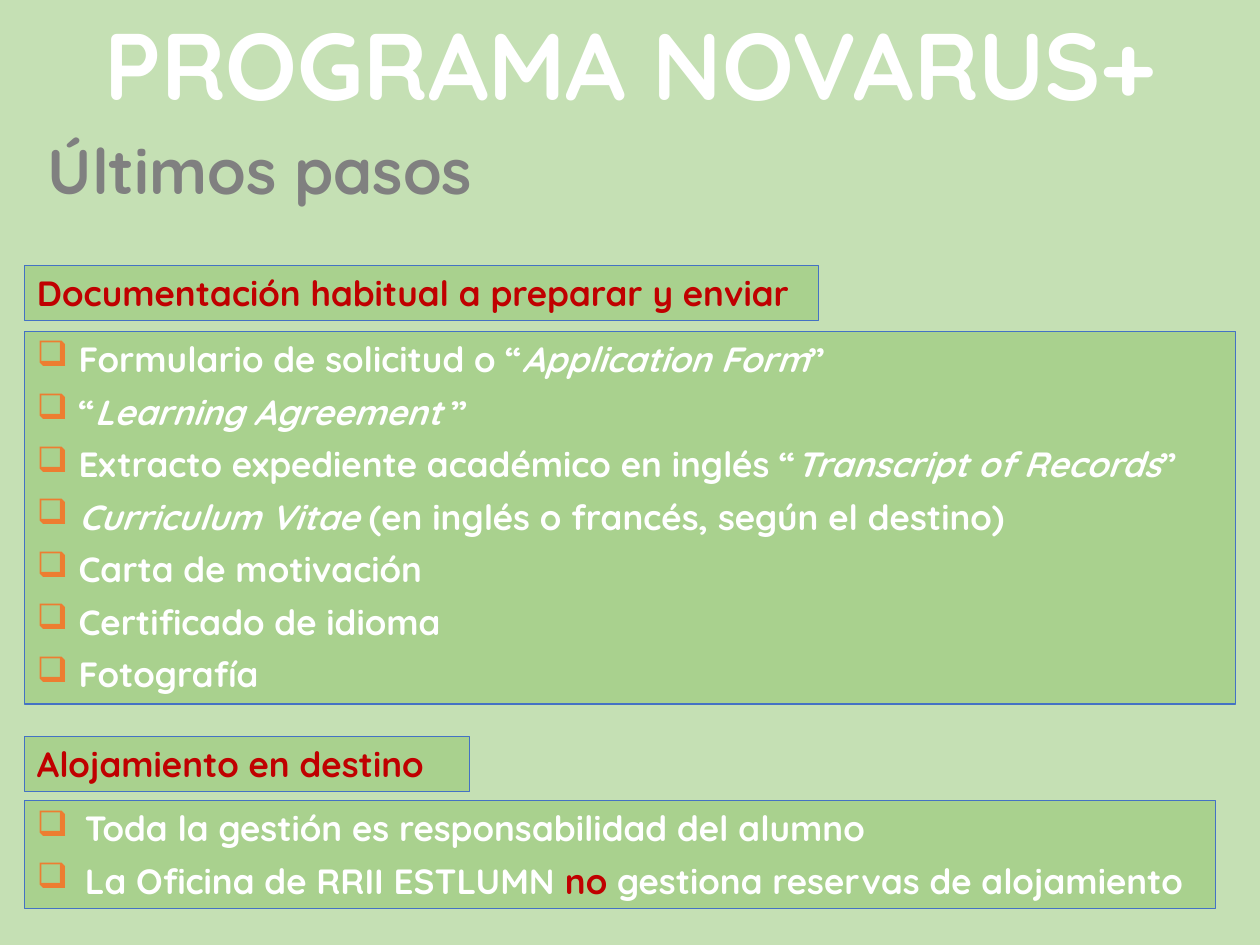
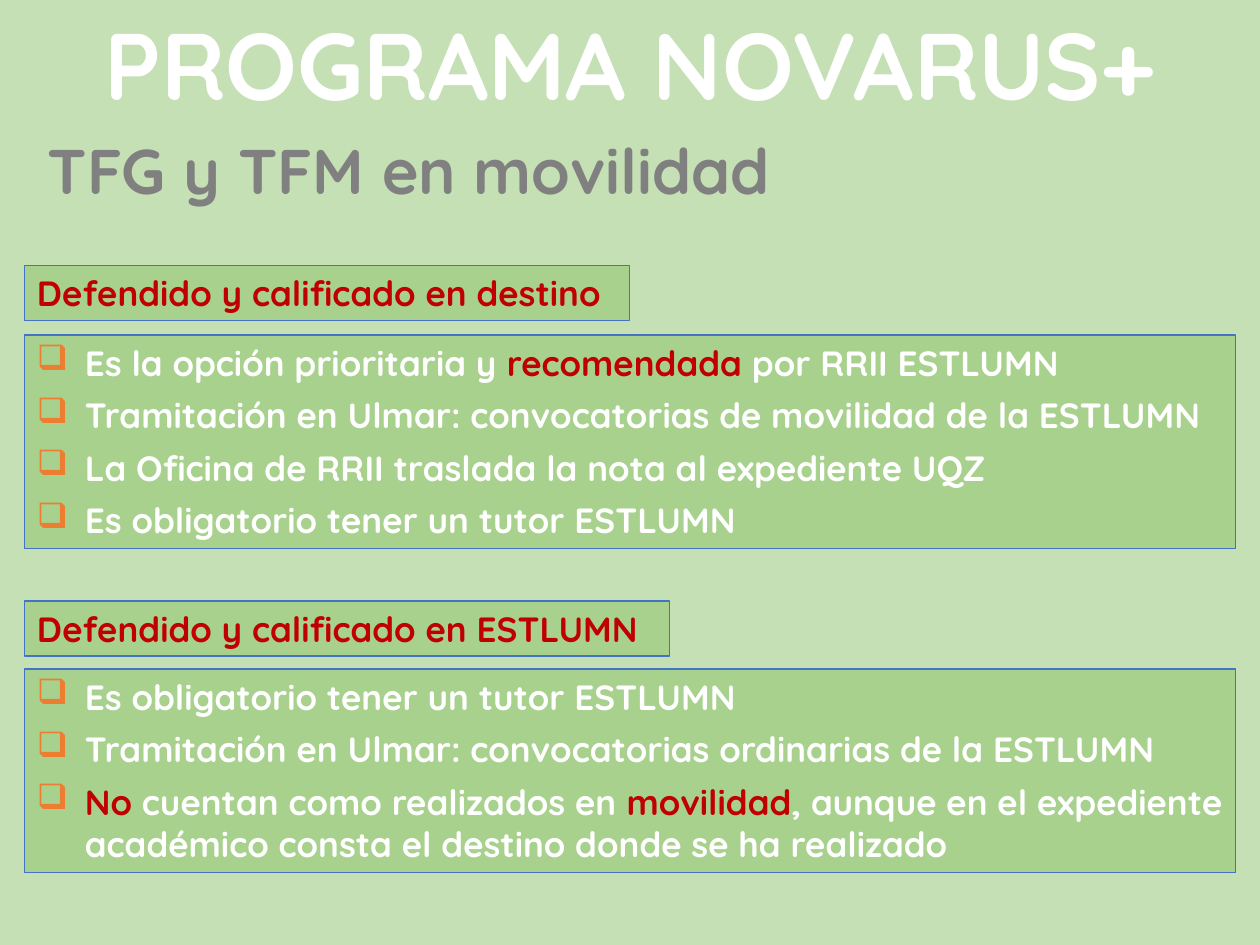
from dataclasses import dataclass
from typing import NamedTuple

from lxml import etree
from pptx import Presentation
from pptx.dml.color import RGBColor
from pptx.enum.shapes import MSO_SHAPE
from pptx.enum.text import MSO_ANCHOR, MSO_AUTO_SIZE, PP_ALIGN
from pptx.oxml.ns import qn
from pptx.util import Inches, Pt

RECTANGLE = MSO_SHAPE.RECTANGLE
TOP = MSO_ANCHOR.TOP
GROW = MSO_AUTO_SIZE.SHAPE_TO_FIT_TEXT
LEFT, CENTER = PP_ALIGN.LEFT, PP_ALIGN.CENTER

COLORS = {
    "background": "C5E0B4", "panel": "A9D18E", "border": "4472C4",
    "white": "FFFFFF", "red": "C00000", "gray": "808080", "bullet": "ED7D31",
}
FONT = "Quicksand"
BULLET = "❑"

# Grid: 100 columns by 75 rows on a 10 by 7.5 inch slide
SLIDE_WIDTH, SLIDE_HEIGHT = Inches(10), Inches(7.5)
COLUMN, ROW = SLIDE_WIDTH / 100, SLIDE_HEIGHT / 75
MARGIN = 1.95
FULL_WIDTH = 96.1
# Panel height in rows: padding, text lines and gaps between paragraphs
PADDING_ROWS, LINE_ROWS, GAP_ROWS = 1, 3.37, 0.83
PARAGRAPH_GAP = Pt(6)


class Run(NamedTuple):
    text: str
    color: str = "white"
    italic: bool = False


class Box(NamedTuple):
    left: float
    top: float
    width: float
    height: float


@dataclass
class Section:
    heading: str
    heading_top: float
    heading_width: float
    items: list[list[Run]]
    list_top: float
    list_width: float = FULL_WIDTH
    indent: float = 3.8
    wrapped_lines: int = 0


@dataclass
class Page:
    subtitle: str
    sections: list[Section]


TITLE = "PROGRAMA NOVARUS+"
TITLE_BOX = Box(0, 0, 100, 10.1)
SUBTITLE_BOX = Box(2.8, 9.95, 94.5, 7.1)

PAGES = [
    Page("Últimos pasos", [
        Section("Documentación habitual a preparar y enviar", 21.05, 63, [
            [Run("Formulario de solicitud o “"),
             Run("Application Form", italic=True), Run("”")],
            [Run("“"), Run("Learning Agreement ", italic=True), Run("”")],
            [Run("Extracto expediente académico en inglés “"),
             Run("Transcript of Records", italic=True), Run("”")],
            [Run("Curriculum Vitae ", italic=True),
             Run("(en inglés o francés, según el destino)")],
            [Run("Carta de motivación")],
            [Run("Certificado de idioma")],
            [Run("Fotografía")],
        ], list_top=26.3, indent=3.3),
        Section("Alojamiento en destino", 58.45, 35.3, [
            [Run("Toda la gestión es responsabilidad del alumno")],
            [Run("La Oficina de RRII ESTLUMN "), Run("no", "red"),
             Run(" gestiona reservas de alojamiento")],
        ], list_top=63.55, list_width=94.5),
    ]),
    Page("TFG y TFM en movilidad", [
        Section("Defendido y calificado en destino", 21.05, 48, [
            [Run("Es la opción prioritaria y "), Run("recomendada", "red"),
             Run(" por RRII ESTLUMN")],
            [Run("Tramitación en Ulmar: convocatorias de movilidad de la ESTLUMN")],
            [Run("La Oficina de RRII traslada la nota al expediente UQZ")],
            [Run("Es obligatorio tener un tutor ESTLUMN")],
        ], list_top=26.6),
        Section("Defendido y calificado en ESTLUMN", 47.7, 51.2, [
            [Run("Es obligatorio tener un tutor ESTLUMN")],
            [Run("Tramitación en Ulmar: convocatorias ordinarias de la ESTLUMN")],
            [Run("No", "red"), Run(" cuentan como realizados en "),
             Run("movilidad", "red"),
             Run(", aunque en el expediente académico consta el destino "
                 "donde se ha realizado")],
        ], list_top=53.1, wrapped_lines=1),
    ]),
]


def rgb(name: str) -> RGBColor:
    return RGBColor.from_string(COLORS[name])


def place(box: Box) -> tuple[int, int, int, int]:
    return (round(box.left * COLUMN), round(box.top * ROW),
            round(box.width * COLUMN), round(box.height * ROW))


def panel_height(paragraphs: int, wrapped_lines: int = 0) -> float:
    lines = paragraphs + wrapped_lines
    return PADDING_ROWS + LINE_ROWS * lines + GAP_ROWS * (paragraphs - 1)


def add_bullet(paragraph, indent: float) -> None:
    properties = paragraph._p.get_or_add_pPr()
    width = round(indent * COLUMN)
    properties.set("marL", str(width))
    properties.set("indent", str(-width))
    color = etree.SubElement(properties, qn("a:buClr"))
    etree.SubElement(color, qn("a:srgbClr"), val=COLORS["bullet"])
    etree.SubElement(properties, qn("a:buChar"), char=BULLET)


def write(shape, paragraphs: list[list[Run]], size: int,
          alignment=LEFT, indent: float = 0) -> None:
    frame = shape.text_frame
    frame_format = {"word_wrap": True, "auto_size": GROW, "vertical_anchor": TOP}
    for name, value in frame_format.items():
        setattr(frame, name, value)
    for index, runs in enumerate(paragraphs):
        paragraph = frame.add_paragraph() if index else frame.paragraphs[0]
        paragraph.alignment = alignment
        if indent:
            paragraph.space_before = PARAGRAPH_GAP
            add_bullet(paragraph, indent)
        for item in runs:
            run = paragraph.add_run()
            run.text = item.text
            font_format = {"name": FONT, "size": Pt(size), "bold": True,
                           "italic": item.italic}
            for name, value in font_format.items():
                setattr(run.font, name, value)
            run.font.color.rgb = rgb(item.color)


def add_panel(slide, box: Box, paragraphs: list[list[Run]],
              indent: float = 0) -> None:
    shape = slide.shapes.add_shape(RECTANGLE, *place(box))
    shape.shadow.inherit = False
    shape.fill.solid()
    shape.fill.fore_color.rgb = rgb("panel")
    shape.line.color.rgb = rgb("border")
    shape.line.width = Pt(0.75)
    write(shape, paragraphs, 20, indent=indent)


def add_section(slide, section: Section) -> None:
    heading_box = Box(MARGIN, section.heading_top, section.heading_width,
                      panel_height(1))
    add_panel(slide, heading_box, [[Run(section.heading, "red")]])
    list_box = Box(MARGIN, section.list_top, section.list_width,
                   panel_height(len(section.items), section.wrapped_lines))
    add_panel(slide, list_box, section.items, section.indent)


def add_label(slide, box: Box, run: Run, size: int, alignment=LEFT) -> None:
    write(slide.shapes.add_textbox(*place(box)), [[run]], size, alignment)


def add_page(presentation, page: Page) -> None:
    slide = presentation.slides.add_slide(presentation.slide_layouts[6])
    slide.background.fill.solid()
    slide.background.fill.fore_color.rgb = rgb("background")
    for section in page.sections:
        add_section(slide, section)
    # Title and subtitle
    add_label(slide, TITLE_BOX, Run(TITLE), 54, CENTER)
    add_label(slide, SUBTITLE_BOX, Run(page.subtitle, "gray"), 36)


def main() -> None:
    presentation = Presentation()
    presentation.slide_width = SLIDE_WIDTH
    presentation.slide_height = SLIDE_HEIGHT
    for page in PAGES:
        add_page(presentation, page)
    presentation.save("out.pptx")


if __name__ == "__main__":
    main()
